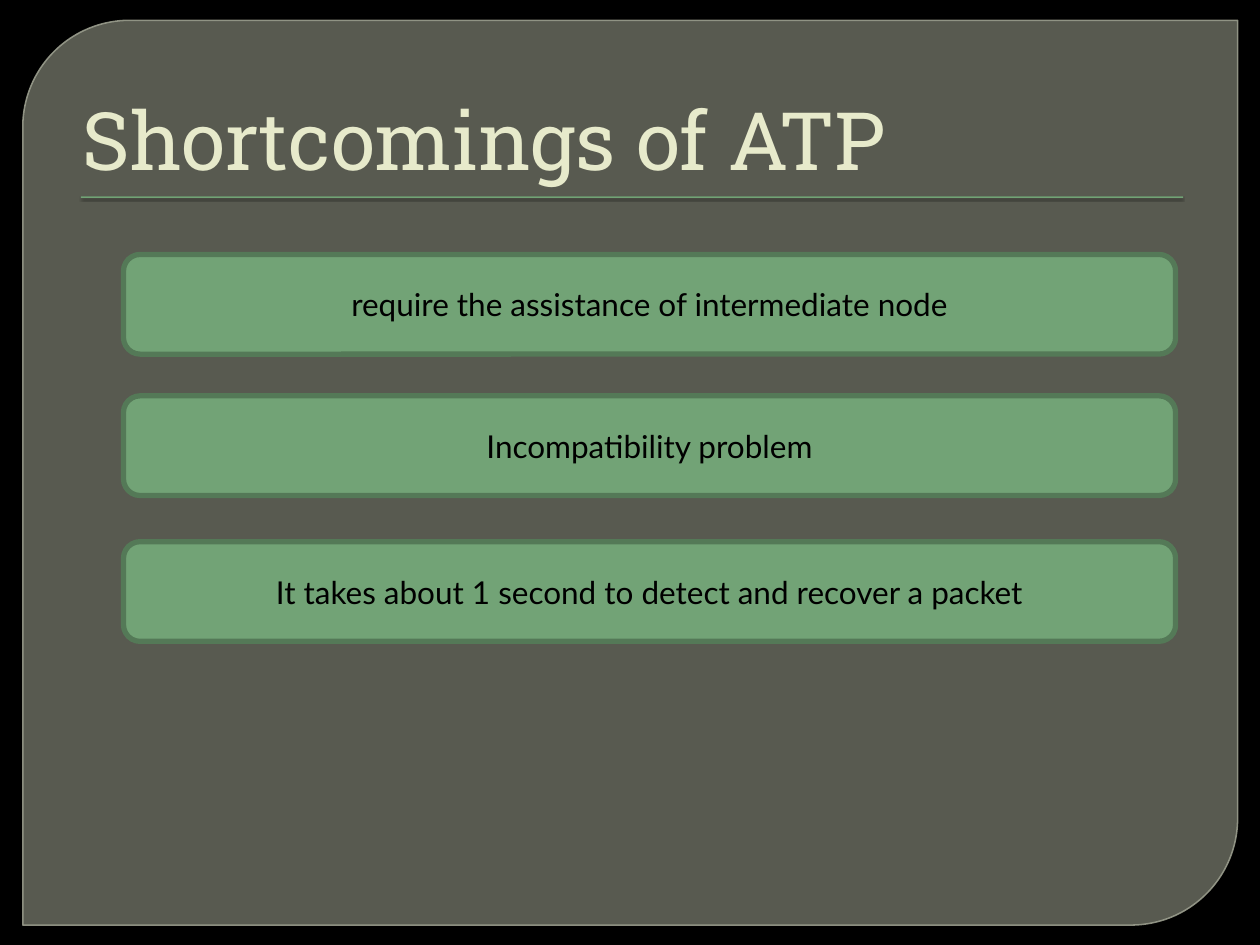
from dataclasses import dataclass

from lxml import etree
from pptx import Presentation
from pptx.dml.color import RGBColor
from pptx.enum.shapes import MSO_SHAPE
from pptx.enum.text import MSO_ANCHOR, MSO_AUTO_SIZE, PP_ALIGN
from pptx.oxml.ns import qn
from pptx.util import Cm, Pt

ROUND = MSO_SHAPE.ROUNDED_RECTANGLE
DIAG = MSO_SHAPE.ROUND_2_DIAG_RECTANGLE
RECT = MSO_SHAPE.RECTANGLE
MIDDLE, BOTTOM = MSO_ANCHOR.MIDDLE, MSO_ANCHOR.BOTTOM
LEFT, CENTER = PP_ALIGN.LEFT, PP_ALIGN.CENTER
FIXED = MSO_AUTO_SIZE.NONE

COLORS = {
    "back": "000000",
    "panel": "888B7B",
    "edge": "9DA090",
    "green": "72A376",
    "border": "547957",
    "title": "E7EACB",
    "text": "000000",
}


@dataclass
class Box:
    left: float
    top: float
    width: float
    height: float

    def cm(self) -> tuple:
        return Cm(self.left), Cm(self.top), Cm(self.width), Cm(self.height)


@dataclass
class Point:
    top: float
    text: str


POINTS = [
    Point(5.13, "require the assistance of intermediate node"),
    Point(7.98, "Incompatibility problem"),
    Point(10.92, "It takes about 1 second to detect and recover a packet"),
]


def color(name: str) -> RGBColor:
    return RGBColor.from_string(COLORS[name])


def add_alpha(node, share: int) -> None:
    etree.SubElement(node, qn("a:alpha"), val=str(share * 1000))


def add_form(slide, kind, box: Box, fill: str, line: str = "", width: float = 0):
    form = slide.shapes.add_shape(kind, *box.cm())
    form.shadow.inherit = False
    form.fill.solid()
    form.fill.fore_color.rgb = color(fill)
    if line:
        form.line.color.rgb = color(line)
        form.line.width = Pt(width)
    else:
        form.line.fill.background()
    return form


def add_text(form, text: str, font: str, size: int, tint: str, align, anchor) -> None:
    frame = form.text_frame
    frame.word_wrap = True
    frame.auto_size = FIXED
    frame.vertical_anchor = anchor
    para = frame.paragraphs[0]
    para.alignment = align
    run = para.add_run()
    run.text = text
    run.font.name = font
    run.font.size = Pt(size)
    run.font.color.rgb = color(tint)


def add_panel(slide) -> None:
    panel = add_form(slide, DIAG, Box(0.46, 0.41, 24.49, 18.24), "panel", "edge", 0.87)
    panel.adjustments[0] = 0.118
    panel.adjustments[1] = 0
    fill, line = panel.element.spPr.iter(qn("a:srgbClr"))
    add_alpha(fill, 65)
    add_alpha(line, 88)


def add_rule(slide) -> None:
    rule = add_form(slide, RECT, Box(1.63, 3.96, 22.22, 0.03), "green")
    effects = rule.element.spPr.find(qn("a:effectLst"))
    shadow = etree.SubElement(effects, qn("a:outerShdw"), blurRad=str(Pt(1)),
                              dist=str(Pt(1)), dir="5400000")
    add_alpha(etree.SubElement(shadow, qn("a:srgbClr"), val=COLORS["back"]), 75)


def add_title(slide) -> None:
    title = slide.shapes.title
    title.left, title.top, title.width, title.height = Box(1.27, 0.71, 22.86, 3.18).cm()
    title.text_frame.margin_left = Cm(0.4)
    add_text(title, "Shortcomings of ATP", "Roboto Slab", 46, "title", LEFT, BOTTOM)
    # Bring the title in front of the panel
    title.element.getparent().append(title.element)


def add_point(slide, point: Point) -> None:
    bar = add_form(slide, ROUND, Box(2.49, point.top, 21.21, 2.01), "green", "border", 3)
    add_text(bar, point.text, "Lato", 18, "text", CENTER, MIDDLE)


def main() -> None:
    deck = Presentation()
    deck.slide_width, deck.slide_height = Cm(25.4), Cm(19.05)
    slide = deck.slides.add_slide(deck.slide_layouts[5])
    slide.background.fill.solid()
    slide.background.fill.fore_color.rgb = color("back")

    # Frame and heading
    add_panel(slide)
    add_rule(slide)
    add_title(slide)

    # Shortcomings
    for point in POINTS:
        add_point(slide, point)

    deck.save("out.pptx")


if __name__ == "__main__":
    main()
